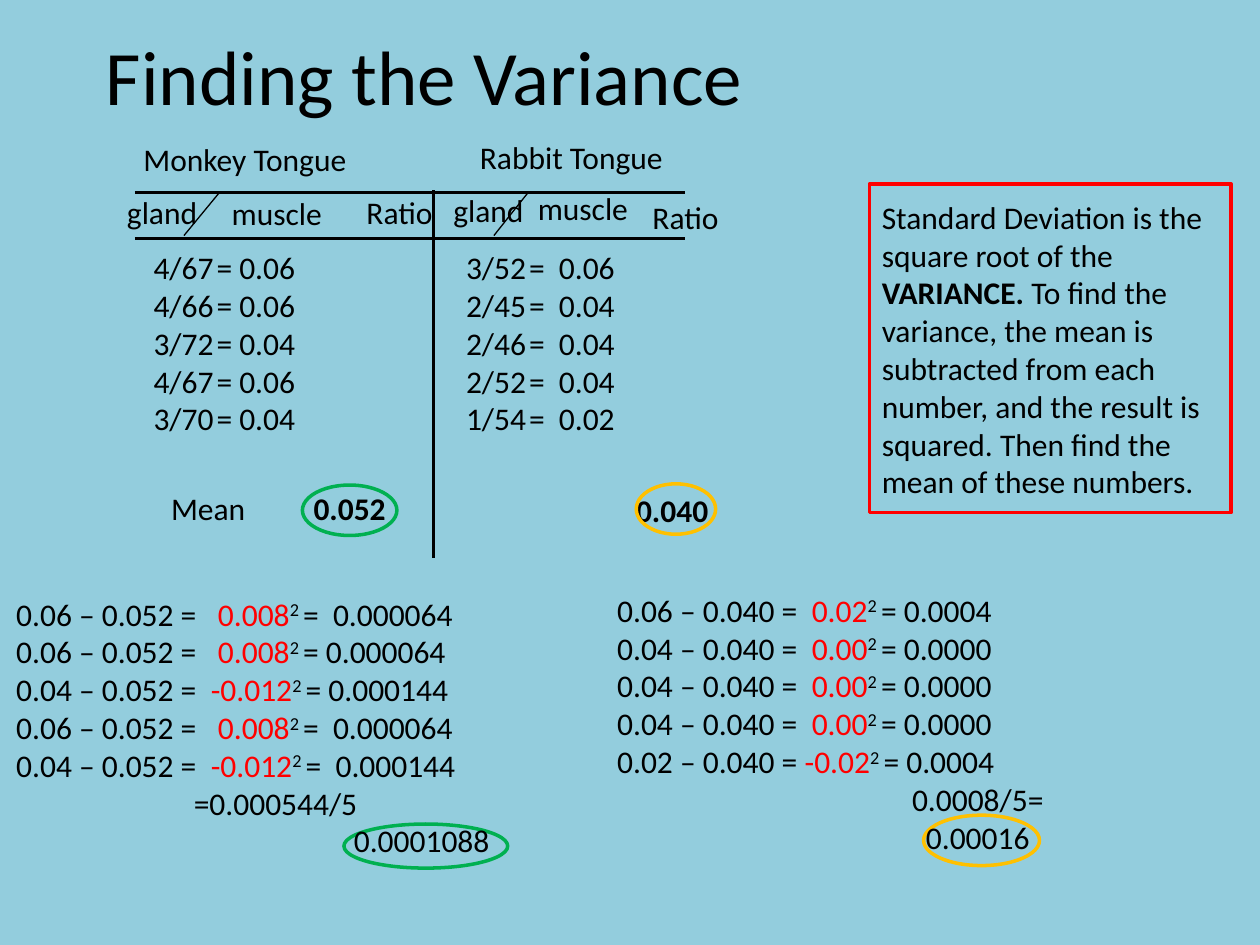
from lxml import etree
from pptx import Presentation
from pptx.dml.color import RGBColor
from pptx.enum import shapes, text
from pptx.oxml import ns
from pptx.util import Inches, Pt

SKY = RGBColor(0x93, 0xCD, 0xDD)
BLACK = RGBColor(0, 0, 0)
RED = RGBColor(0xFF, 0, 0)
GREEN = RGBColor(0, 0xB0, 0x50)
AMBER = RGBColor(0xFF, 0xC0, 0)

BODY = {"name": "Calibri", "size": Pt(18), "bold": False}
TITLE = {"name": "Calibri", "size": Pt(44), "bold": False}

HEADING = "Finding the Variance"
LABELS = [
    ("Monkey Tongue", 1.04, 1.06, 2.0, False),
    ("Rabbit Tongue", 3.71, 1.05, 2.79, False),
    ("gland", 0.91, 1.48, 0.87, False),
    ("gland", 3.5, 1.47, 1.04, False),
    ("muscle", 1.74, 1.49, 0.98, False),
    ("muscle", 4.17, 1.45, 0.93, False),
    ("Ratio", 2.81, 1.48, 0.89, False),
    ("Ratio", 5.08, 1.52, 0.89, False),
    ("Mean", 1.26, 3.83, 1.33, False),
    ("0.052", 2.39, 3.83, 0.86, True),
    ("0.040", 4.95, 3.85, 0.83, True),
]
DEFINITION = [
    ("Standard Deviation is the square root of the ", {}),
    ("VARIANCE. ", {"bold": True}),
    ("To find the variance, the mean is subtracted from each number, "
     "and the result is squared. Then find the mean of these numbers.", {}),
]
RATIOS = [
    (1.12, 2.41, "= ", [("4/67", "0.06"), ("4/66", "0.06"), ("3/72", "0.04"),
                        ("4/67", "0.06"), ("3/70", "0.04")]),
    (3.6, 2.39, "=  ", [("3/52", "0.06"), ("2/45", "0.04"), ("2/46", "0.04"),
                        ("2/52", "0.04"), ("1/54", "0.02")]),
]
DEVIATIONS = [
    ((0.03, 4.67, 4.01, 2.22), [
        ("0.06 – 0.052 =   ", "0.008", "=  0.000064"),
        ("0.06 – 0.052 =   ", "0.008", "= 0.000064"),
        ("0.04 – 0.052 =  ", "-0.012", "= 0.000144"),
        ("0.06 – 0.052 =   ", "0.008", "=  0.000064"),
        ("0.04 – 0.052 =  ", "-0.012", "=  0.000144"),
    ], [("=0.000544/5", 1.41), ("0.0001088", 2.68)]),
    ((4.8, 4.64, 3.73, 2.22), [
        ("0.06 – 0.040 =  ", "0.02", "= 0.0004"),
        ("0.04 – 0.040 =  ", "0.00", "= 0.0000"),
        ("0.04 – 0.040 =  ", "0.00", "= 0.0000"),
        ("0.04 – 0.040 =  ", "0.00", "= 0.0000"),
        ("0.02 – 0.040 = ", "-0.02", "= 0.0004"),
    ], [("0.0008/5=", 2.34), ("0.00016", 2.45)]),
]
OVAL = shapes.MSO_SHAPE.OVAL
OUTLINES = [
    (OVAL, (2.4, 3.85, 0.75, 0.4), GREEN),
    (OVAL, (5.05, 3.84, 0.63, 0.4), AMBER),
    (shapes.MSO_SHAPE.RECTANGLE, (6.9, 1.46, 2.87, 2.61), RED),
    (OVAL, (2.73, 6.54, 1.3, 0.35), GREEN),
    (OVAL, (7.33, 6.47, 0.92, 0.4), AMBER),
]
RULES = [
    ((1.74, 1.53, 1.46, 1.87), 0.75),
    ((4.19, 1.53, 3.92, 1.87), 0.75),
    ((1.07, 1.53, 5.44, 1.53), 1.75),
    ((1.07, 1.89, 5.44, 1.89), 1.75),
    ((3.44, 1.51, 3.44, 4.43), 1.75),
]


def inches(values):
    return [Inches(value) for value in values]


def add_run(line, words, base=BODY, color=BLACK, raised=False, **changes):
    run = line.add_run()
    run.text = words
    for key, value in {**base, **changes}.items():
        setattr(run.font, key, value)
    run.font.color.rgb = color
    if raised:
        run.font._element.set("baseline", "30000")


def add_text(slide, place, lines):
    frame = slide.shapes.add_textbox(*inches(place)).text_frame
    frame.word_wrap = True
    for number, (runs, indent) in enumerate(lines):
        line = frame.add_paragraph() if number else frame.paragraphs[0]
        if indent:
            line._p.get_or_add_pPr().set("marL", str(Inches(indent)))
        for words, style in runs:
            add_run(line, words, **style)


def add_outline(slide, kind, place, color):
    outline = slide.shapes.add_shape(kind, *inches(place))
    outline.shadow.inherit = False
    outline.fill.background()
    outline.line.color.rgb = color
    outline.line.width = Pt(2)


def add_rule(slide, ends, width):
    rule = slide.shapes.add_connector(shapes.MSO_CONNECTOR.STRAIGHT, *inches(ends))
    rule.line.color.rgb = BLACK
    rule.line.width = Pt(width)
    etree.SubElement(rule._element.spPr, ns.qn("a:effectLst"))


def main():
    deck = Presentation()
    deck.slide_width, deck.slide_height = Inches(10), Inches(7.5)
    slide = deck.slides.add_slide(deck.slide_layouts[5])
    slide.background.fill.solid()
    slide.background.fill.fore_color.rgb = SKY

    title = slide.shapes.title
    title.left, title.top, title.width, title.height = inches((-1.13, -0.03, 9, 1.25))
    title.text_frame.vertical_anchor = text.MSO_ANCHOR.MIDDLE
    heading = title.text_frame.paragraphs[0]
    heading.alignment = text.PP_ALIGN.CENTER
    add_run(heading, HEADING, TITLE)

    for words, left, top, width, bold in LABELS:
        add_text(slide, (left, top, width, 0.4), [([(words, {"bold": bold})], 0)])
    add_text(slide, (6.9, 1.52, 3.03, 2.52), [(DEFINITION, 0)])

    for outline in OUTLINES:
        add_outline(slide, *outline)

    for place, steps, totals in DEVIATIONS:
        lines = [([(start, {}), (difference, {"color": RED}),
                   ("2 ", {"raised": True}), (square, {})], 0)
                 for start, difference, square in steps]
        lines += [([(total, {})], indent) for total, indent in totals]
        add_text(slide, place, lines)

    for rule in RULES:
        add_rule(slide, *rule)

    for left, width, equals, rows in RATIOS:
        add_text(slide, (left, 1.92, width, 1.62),
                 [([(f"{count}\t{equals}{ratio}", {})], 0) for count, ratio in rows])

    deck.save("out.pptx")


if __name__ == "__main__":
    main()
